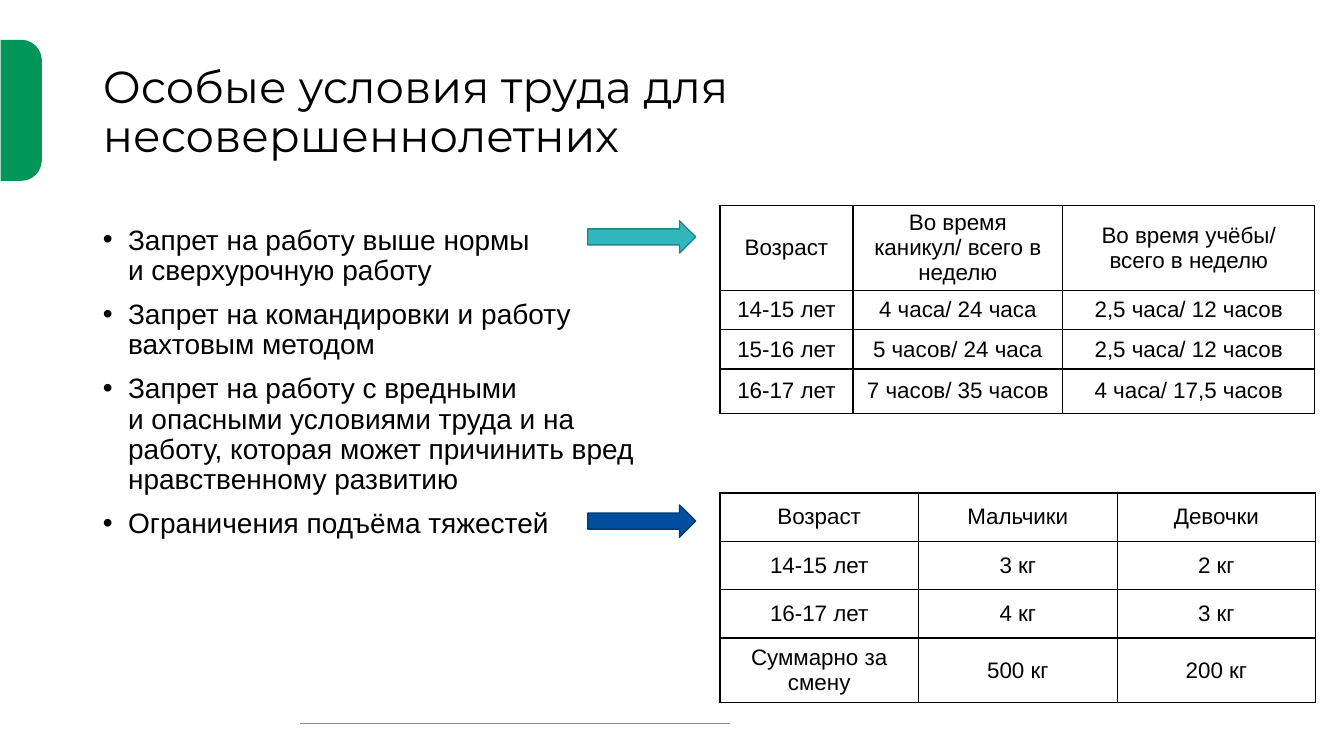
from dataclasses import dataclass

from lxml import etree
from pptx import Presentation
from pptx.dml.color import RGBColor
from pptx.enum.shapes import MSO_CONNECTOR, MSO_SHAPE
from pptx.enum.text import MSO_ANCHOR, MSO_AUTO_SIZE, PP_ALIGN
from pptx.oxml.ns import qn
from pptx.util import Inches, Pt

LEFT, CENTER = PP_ALIGN.LEFT, PP_ALIGN.CENTER
MIDDLE, TOP = MSO_ANCHOR.MIDDLE, MSO_ANCHOR.TOP
NO_FIT = MSO_AUTO_SIZE.NONE
ARROW, TAB = MSO_SHAPE.RIGHT_ARROW, MSO_SHAPE.ROUND_2_SAME_RECTANGLE
STRAIGHT = MSO_CONNECTOR.STRAIGHT


@dataclass(frozen=True)
class Theme:
    title_font: str = "Montserrat"
    text_font: str = "Arial"
    title_size: float = 32
    body_size: float = 20
    table_size: float = 16
    ink: str = "000000"
    green: str = "009657"
    teal: str = "30B7BC"
    teal_edge: str = "238589"
    blue: str = "004F9F"
    blue_edge: str = "003974"
    rule: str = "919191"


THEME = Theme()

# Content
TITLE = "Особые условия труда для несовершеннолетних"
BANS = [
    "Запрет на работу выше нормы\nи сверхурочную работу",
    "Запрет на командировки и работу вахтовым методом",
    "Запрет на работу с вредными\nи опасными условиями труда и на работу, "
    "которая может причинить вред нравственному развитию",
    "Ограничения подъёма тяжестей",
]
LIFTING = [
    ("Возраст", "Мальчики", "Девочки"),
    ("14-15 лет", "3 кг", "2 кг"),
    ("16-17 лет", "4 кг", "3 кг"),
    ("Суммарно за смену", "500 кг", "200 кг"),
]
HOURS = [
    ("Возраст", "Во время каникул/ всего в неделю", "Во время учёбы/ всего в неделю"),
    ("14-15 лет", "4 часа/ 24 часа", "2,5 часа/ 12 часов"),
    ("15-16 лет", "5 часов/ 24 часа", "2,5 часа/ 12 часов"),
    ("16-17 лет", "7 часов/ 35 часов", "4 часа/ 17,5 часов"),
]
# Rows, top, column widths, row heights
TABLES = [
    (LIFTING, 4.89, (1.97, 1.97, 1.97), (0.48, 0.48, 0.48, 0.64)),
    (HOURS, 2.04, (1.32, 2.08, 2.5), (0.83, 0.39, 0.39, 0.44)),
]
TABLE_LEFT = 7.14
# Top, fill, edge
ARROWS = [
    (2.19, THEME.teal, THEME.teal_edge),
    (5.01, THEME.blue, THEME.blue_edge),
]


def color(code):
    return RGBColor.from_string(code)


def set_font(para, name, size):
    para.font.name = name
    para.font.size = Pt(size)
    para.font.color.rgb = color(THEME.ink)


def place(box, left, top, width, height):
    box.left, box.top = Inches(left), Inches(top)
    box.width, box.height = Inches(width), Inches(height)


def add_bullet(para):
    props = para._p.get_or_add_pPr()
    props.set("marL", str(Inches(0.25)))
    props.set("indent", str(-Inches(0.25)))
    etree.SubElement(props, qn("a:buFont"), typeface="Arial")
    etree.SubElement(props, qn("a:buChar"), char="•")


def add_borders(cell):
    props = cell._tc.get_or_add_tcPr()
    for side in ("a:lnL", "a:lnR", "a:lnT", "a:lnB"):
        line = etree.SubElement(props, qn(side), w=str(Pt(1)))
        fill = etree.SubElement(line, qn("a:solidFill"))
        etree.SubElement(fill, qn("a:srgbClr"), val=THEME.ink)


def add_table(page, rows, top, widths, heights):
    table = page.shapes.add_table(
        len(rows), len(widths), Inches(TABLE_LEFT), Inches(top),
        Inches(sum(widths)), Inches(sum(heights))).table
    table.first_row = table.horz_banding = False
    for column, width in zip(table.columns, widths):
        column.width = Inches(width)
    for row, height, texts in zip(table.rows, heights, rows):
        row.height = Inches(height)
        for cell, text in zip(row.cells, texts):
            add_borders(cell)
            cell.fill.background()
            cell.vertical_anchor = MIDDLE
            para = cell.text_frame.paragraphs[0]
            para.text = text
            para.alignment = CENTER
            set_font(para, THEME.text_font, THEME.table_size)


def add_shape(page, kind, left, top, width, height, fill, edge=None):
    shape = page.shapes.add_shape(
        kind, Inches(left), Inches(top), Inches(width), Inches(height))
    shape.shadow.inherit = False
    shape.fill.solid()
    shape.fill.fore_color.rgb = color(fill)
    if edge:
        shape.line.color.rgb = color(edge)
        shape.line.width = Pt(1)
    else:
        shape.line.fill.background()
    return shape


def main():
    deck = Presentation()
    deck.slide_width, deck.slide_height = Inches(13.33), Inches(7.5)
    page = deck.slides.add_slide(deck.slide_layouts[1])
    title, body = page.shapes.title, page.placeholders[1]

    # Footer rule and green side tab
    rule = page.shapes.add_connector(
        STRAIGHT, Inches(2.98), Inches(7.18), Inches(7.24), Inches(7.18))
    rule.line.color.rgb = color(THEME.rule)
    rule.line.width = Pt(0.75)
    etree.SubElement(rule._element.spPr, qn("a:effectLst"))
    tab = add_shape(page, TAB, -0.49, 0.89, 1.4, 0.41, THEME.green)
    tab.adjustments[0] = 0.5
    tab.rotation = 90

    # Title
    place(title, 0.92, 0.4, 11.5, 1.45)
    frame = title.text_frame
    frame.auto_size, frame.vertical_anchor = NO_FIT, MIDDLE
    # The heading wraps after the fourth word
    para = frame.paragraphs[0]
    para.text = TITLE.replace("для ", "для\n")
    para.alignment, para.line_spacing = LEFT, 0.9
    set_font(para, THEME.title_font, THEME.title_size)

    # List of restrictions
    place(body, 0.92, 2.19, 5.7, 4.4)
    frame = body.text_frame
    frame.auto_size, frame.vertical_anchor = NO_FIT, TOP
    for index, text in enumerate(BANS):
        para = frame.add_paragraph() if index else frame.paragraphs[0]
        para.text = text
        add_bullet(para)
        para.alignment, para.line_spacing = LEFT, 0.9
        para.space_before = Pt(10 if index else 0)
        set_font(para, THEME.text_font, THEME.body_size)

    # Tables and the arrows leading to them
    for table in TABLES:
        add_table(page, *table)
    for top, fill, edge in ARROWS:
        add_shape(page, ARROW, 5.83, top, 1.07, 0.32, fill, edge)

    deck.save("out.pptx")


if __name__ == "__main__":
    main()
